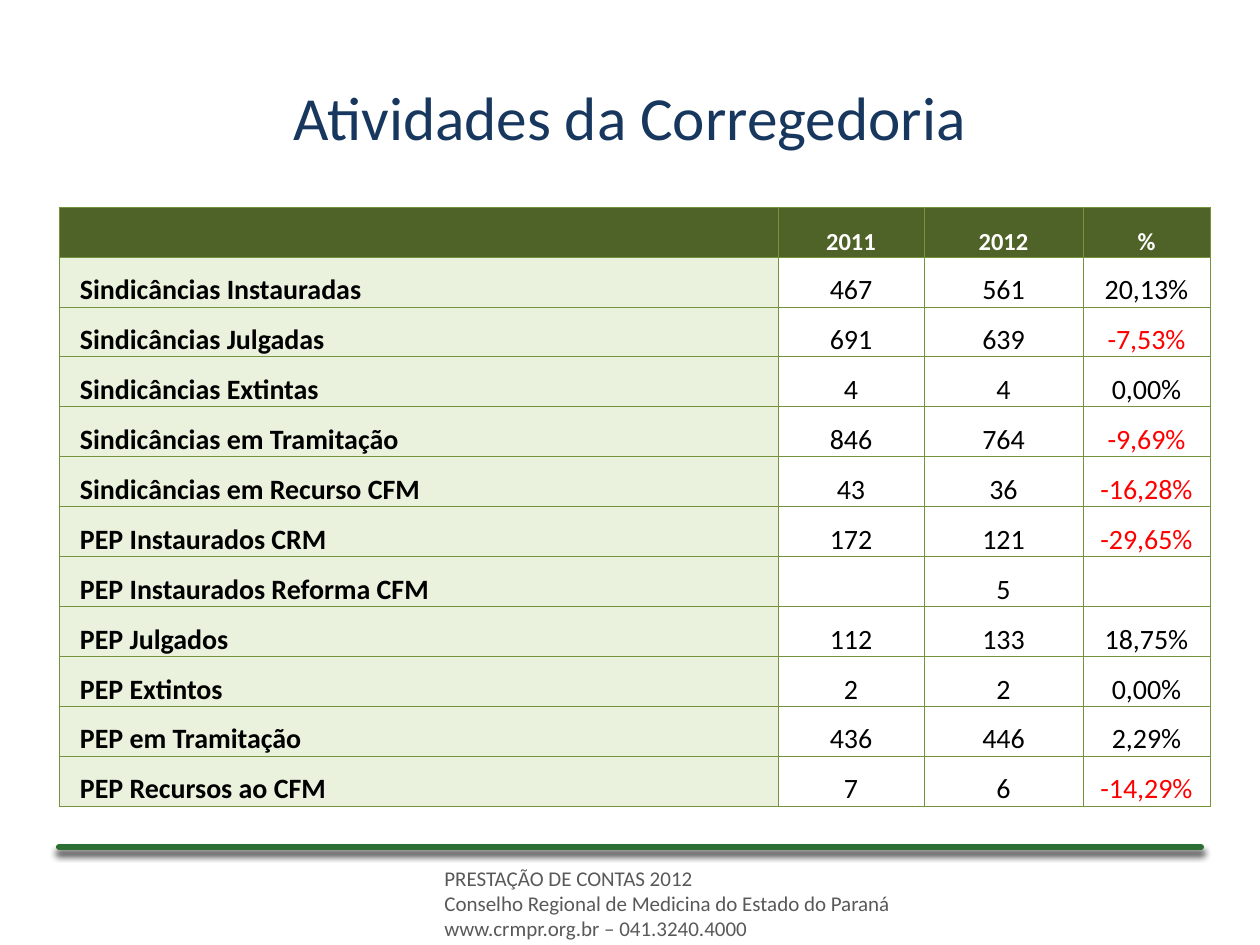
from dataclasses import dataclass

from lxml.etree import SubElement
from pptx import Presentation
from pptx.dml.color import RGBColor
from pptx.enum.shapes import MSO_CONNECTOR
from pptx.enum.text import MSO_ANCHOR, MSO_AUTO_SIZE, PP_ALIGN
from pptx.oxml.ns import qn
from pptx.util import Pt

PX = 914400 / 126


@dataclass(frozen=True)
class Theme:
    font: str = "Calibri"
    title: str = "17375E"
    footer: str = "595959"
    rule: str = "2C6E34"
    shadow: str = "000000"
    border: str = "75923C"
    head_fill: str = "4F6228"
    label_fill: str = "EAF1DD"
    head_text: str = "FFFFFF"
    text: str = "000000"
    negative: str = "FF0000"
    title_size: int = 35
    body_size: int = 16
    head_size: int = 14
    footer_size: int = 12


THEME = Theme()

COL_WIDTHS = [719, 146, 159, 127]
ROW_HEIGHT = 50
ROWS = [
    ("", "2011", "2012", "%"),
    ("Sindicâncias Instauradas", "467", "561", "20,13%"),
    ("Sindicâncias Julgadas", "691", "639", "-7,53%"),
    ("Sindicâncias Extintas", "4", "4", "0,00%"),
    ("Sindicâncias em Tramitação", "846", "764", "-9,69%"),
    ("Sindicâncias em Recurso CFM", "43", "36", "-16,28%"),
    ("PEP Instaurados CRM", "172", "121", "-29,65%"),
    ("PEP Instaurados Reforma CFM", "", "5", ""),
    ("PEP Julgados", "112", "133", "18,75%"),
    ("PEP Extintos", "2", "2", "0,00%"),
    ("PEP em Tramitação", "436", "446", "2,29%"),
    ("PEP Recursos ao CFM", "7", "6", "-14,29%"),
]
FOOTER_LINES = [
    "PRESTAÇÃO DE CONTAS 2012",
    "Conselho Regional de Medicina do Estado do Paraná",
    "www.crmpr.org.br – 041.3240.4000",
]


def px(n):
    return round(n * PX)


def add_run(p, text, size, color, bold=False):
    r = p.add_run()
    r.text = text
    r.font.name = THEME.font
    r.font.size = Pt(size)
    r.font.bold = bold
    r.font.color.rgb = RGBColor.from_string(color)


def add_color(parent, color):
    fill = SubElement(parent, qn("a:solidFill"))
    return SubElement(fill, qn("a:srgbClr"), val=color)


def set_title(slide, text, x, y, w, h):
    sp = slide.shapes.title
    sp.left, sp.top, sp.width, sp.height = px(x), px(y), px(w), px(h)
    tf = sp.text_frame
    tf.auto_size = MSO_AUTO_SIZE.NONE
    tf.vertical_anchor = MSO_ANCHOR.MIDDLE
    p = tf.paragraphs[0]
    p.alignment = PP_ALIGN.CENTER
    add_run(p, text, THEME.title_size, THEME.title)


def add_rule(slide, x, y, w):
    """Thick round-ended line with a soft shadow below it."""
    line = slide.shapes.add_connector(
        MSO_CONNECTOR.STRAIGHT, px(x), px(y), px(x + w), px(y))
    line.line.color.rgb = RGBColor.from_string(THEME.rule)
    line.line.width = Pt(3.5)
    sp_pr = line._element.spPr
    sp_pr.find(qn("a:ln")).set("cap", "rnd")
    effects = SubElement(sp_pr, qn("a:effectLst"))
    shadow = SubElement(effects, qn("a:outerShdw"), blurRad=str(Pt(4)),
                        dist=str(Pt(3)), dir="5400000", rotWithShape="0")
    color = SubElement(shadow, qn("a:srgbClr"), val=THEME.shadow)
    SubElement(color, qn("a:alpha"), val="73000")


def add_footer(slide, x, y, w, h):
    tf = slide.shapes.add_textbox(px(x), px(y), px(w), px(h)).text_frame
    tf.word_wrap = True
    tf.auto_size = MSO_AUTO_SIZE.SHAPE_TO_FIT_TEXT
    for i, text in enumerate(FOOTER_LINES):
        p = tf.add_paragraph() if i else tf.paragraphs[0]
        add_run(p, text, THEME.footer_size, THEME.footer)


def set_borders(cell):
    tc_pr = cell._tc.get_or_add_tcPr()
    for side in ("lnL", "lnR", "lnT", "lnB"):
        add_color(SubElement(tc_pr, qn(f"a:{side}"), w=str(Pt(0.5))), THEME.border)


def fill_cell(cell, text, is_head, is_label):
    cell.vertical_anchor = MSO_ANCHOR.BOTTOM
    cell.margin_left = px(21 if is_label and not is_head else 1)
    cell.margin_right = cell.margin_top = px(1)
    cell.margin_bottom = 0
    set_borders(cell)
    if is_head or is_label:
        cell.fill.solid()
        cell.fill.fore_color.rgb = RGBColor.from_string(
            THEME.head_fill if is_head else THEME.label_fill)
    else:
        cell.fill.background()
    if not text:
        return
    p = cell.text_frame.paragraphs[0]
    p.alignment = PP_ALIGN.LEFT if is_label else PP_ALIGN.CENTER
    if is_head:
        color = THEME.head_text
    else:
        color = THEME.negative if text.startswith("-") else THEME.text
    size = THEME.head_size if is_head else THEME.body_size
    add_run(p, text, size, color, bold=is_head or is_label)


def add_activity_table(slide, x, y):
    table = slide.shapes.add_table(
        len(ROWS), len(COL_WIDTHS), px(x), px(y),
        px(sum(COL_WIDTHS)), px(ROW_HEIGHT * len(ROWS))).table
    table.first_row = table.horz_banding = False
    for column, width in zip(table.columns, COL_WIDTHS):
        column.width = px(width)
    for i, values in enumerate(ROWS):
        table.rows[i].height = px(ROW_HEIGHT)
        for j, text in enumerate(values):
            fill_cell(table.cell(i, j), text, is_head=i == 0, is_label=j == 0)


def main():
    prs = Presentation()
    prs.slide_width, prs.slide_height = px(1260), px(945)
    slide = prs.slides.add_slide(prs.slide_layouts[5])
    add_footer(slide, 432, 859, 615, 89)
    add_rule(slide, 59, 847, 1142)
    set_title(slide, "Atividades da Corregedoria", 63, 38, 1134, 157)
    add_activity_table(slide, 59, 207)
    prs.save("out.pptx")


if __name__ == "__main__":
    main()
